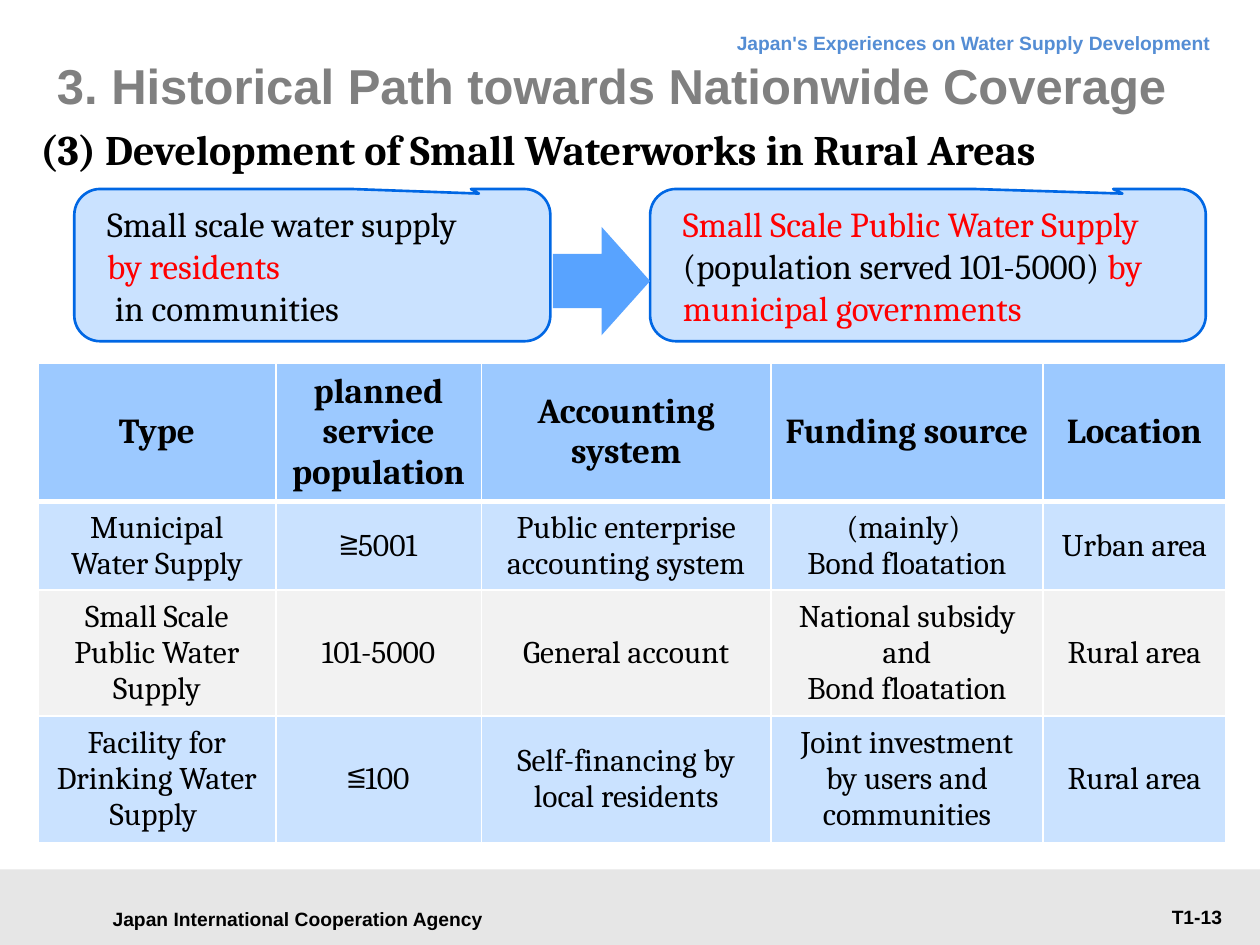
from lxml.etree import SubElement
from pptx import Presentation
from pptx.dml.color import RGBColor
from pptx.enum.shapes import MSO_SHAPE
from pptx.enum.text import MSO_ANCHOR, PP_ALIGN
from pptx.oxml.ns import qn
from pptx.util import Pt

BLACK, RED, WHITE = "000000", "FF0000", "FFFFFF"
LIGHT_BLUE, HEADER_BLUE, PALE_GREY = "CAE2FF", "9CC9FF", "F2F2F2"

SMALL = {"name": "Arial", "size": Pt(11), "bold": True}
TITLE = {"name": "Arial", "size": Pt(28), "bold": True}
SUBTITLE = {"name": "Cambria", "size": Pt(24), "bold": True}
STAGE = {"name": "Cambria", "size": Pt(20), "bold": False}
TABLE_HEAD = {"name": "Cambria", "size": Pt(20), "bold": True}
TABLE_BODY = {"name": "Cambria", "size": Pt(18), "bold": False}

COLUMN_WIDTHS = [136, 117.5, 165.5, 155.5, 104.5]
ROW_HEIGHTS = [79, 50.5, 72, 72]
SYSTEM_ROWS = [
    ["Type", "planned service population", "Accounting system",
     "Funding source", "Location"],
    ["Municipal Water Supply", "≧5001", "Public enterprise accounting system",
     "(mainly) \nBond floatation", "Urban area"],
    ["Small Scale Public Water Supply", "101-5000", "General account",
     "National subsidy and\nBond floatation", "Rural area"],
    ["Facility for Drinking Water Supply ", "≦100",
     "Self-financing by local residents",
     "Joint investment by users and communities", "Rural area"],
]


def color(hex_value):
    return RGBColor.from_string(hex_value)


def set_all(target, values):
    for key, value in values.items():
        setattr(target, key, value)


def write(frame, paragraphs, font, align=PP_ALIGN.LEFT, spacing=None):
    """Each paragraph is a list of (text, colour) runs."""
    for index, runs in enumerate(paragraphs):
        paragraph = frame.add_paragraph() if index else frame.paragraphs[0]
        set_all(paragraph, {"alignment": align, "line_spacing": spacing})
        for text, text_color in runs:
            run = paragraph.add_run()
            run.text = text
            set_all(run.font, font)
            run.font.color.rgb = color(text_color)


def set_frame(frame, anchor, margins):
    left, top, right, bottom = map(Pt, margins)
    set_all(frame, {"word_wrap": True, "vertical_anchor": anchor,
                    "margin_left": left, "margin_top": top,
                    "margin_right": right, "margin_bottom": bottom})


def add_label(slide, box, text, font, text_color=BLACK, align=PP_ALIGN.LEFT,
              anchor=MSO_ANCHOR.TOP, margins=(7.2, 3.6, 7.2, 3.6), spacing=None):
    frame = slide.shapes.add_textbox(*map(Pt, box)).text_frame
    set_frame(frame, anchor, margins)
    write(frame, [[(text, text_color)]], font, align, spacing)


def add_block(slide, preset, box, fill, line=None):
    block = slide.shapes.add_shape(preset, *map(Pt, box))
    block.shadow.inherit = False
    block.fill.solid()
    block.fill.fore_color.rgb = color(fill)
    if line:
        block.line.color.rgb = color(line)
        block.line.width = Pt(1.5)
    else:
        block.line.fill.background()
    return block


def add_stage(slide, left, width, paragraphs):
    stage = add_block(slide, MSO_SHAPE.ROUNDED_RECTANGULAR_CALLOUT,
                      (left, 108, width, 87), LIGHT_BLUE, "0067E4")
    for index, value in enumerate((0.35, -0.47, 0.17)):
        stage.adjustments[index] = value
    set_frame(stage.text_frame, MSO_ANCHOR.MIDDLE, (14.4, 2.9, 8.6, 2.9))
    write(stage.text_frame, paragraphs, STAGE)


def set_borders(cell, top, bottom):
    properties = cell._tc.get_or_add_tcPr()
    sides = (("lnL", 1), ("lnR", 1), ("lnT", top), ("lnB", bottom))
    for position, (side, width) in enumerate(sides):
        border = SubElement(properties, qn(f"a:{side}"), w=str(Pt(width)))
        properties.insert(position, border)
        fill = SubElement(border, qn("a:solidFill"))
        SubElement(fill, qn("a:srgbClr"), val=WHITE)


def add_systems_table(slide):
    table = slide.shapes.add_table(
        len(SYSTEM_ROWS), len(COLUMN_WIDTHS), Pt(21.6), Pt(207.5),
        Pt(sum(COLUMN_WIDTHS)), Pt(sum(ROW_HEIGHTS))).table
    for column, width in zip(table.columns, COLUMN_WIDTHS):
        column.width = Pt(width)
    for row, height in zip(table.rows, ROW_HEIGHTS):
        row.height = Pt(height)
    for r, texts in enumerate(SYSTEM_ROWS):
        band = LIGHT_BLUE if r % 2 else PALE_GREY
        for c, text in enumerate(texts):
            cell = table.cell(r, c)
            cell.vertical_anchor = MSO_ANCHOR.MIDDLE
            cell.fill.solid()
            cell.fill.fore_color.rgb = color(band if r else HEADER_BLUE)
            set_borders(cell, top=3 if r == 1 else 1, bottom=1 if r else 3)
            lines = [[(line, BLACK)] for line in text.split("\n")]
            write(cell.text_frame, lines, TABLE_BODY if r else TABLE_HEAD,
                  PP_ALIGN.CENTER)


def main():
    presentation = Presentation()
    presentation.slide_width, presentation.slide_height = Pt(720), Pt(540)
    slide = presentation.slides.add_slide(presentation.slide_layouts[6])

    # Footer band and running header
    add_block(slide, MSO_SHAPE.RECTANGLE, (0, 496.8, 720, 43.2), "E6E6E6")
    add_label(slide, (51, 512.6, 238.5, 24.5), "Japan International Cooperation Agency",
              SMALL, align=PP_ALIGN.CENTER, anchor=MSO_ANCHOR.MIDDLE)
    add_label(slide, (196, 9.4, 503, 27.4),
              "Japan's Experiences on Water Supply Development",
              SMALL, "548DD4", PP_ALIGN.RIGHT, spacing=Pt(18))
    add_label(slide, (592.5, 514, 113, 21), "T1-13", SMALL, align=PP_ALIGN.RIGHT)

    # Comparison of water supply types
    add_systems_table(slide)

    # Headings
    add_label(slide, (28, 20.2, 646.5, 57), "3. Historical Path towards Nationwide Coverage",
              TITLE, "808080", anchor=MSO_ANCHOR.MIDDLE, margins=(4.5, 0, 0, 0))
    add_label(slide, (20.2, 70.6, 680.5, 28.8),
              "(3) Development of Small Waterworks in Rural Areas",
              SUBTITLE, margins=(2.9, 0, 0, 0))

    # Shift from residents to municipal governments
    add_stage(slide, 42.5, 272, [[("Small scale water supply", BLACK)],
                                 [("by residents", RED)],
                                 [(" in communities", BLACK)]])
    add_stage(slide, 371.5, 317.5, [[("Small Scale Public Water Supply ", RED),
                                     ("(population served 101-5000) ", BLACK),
                                     ("by municipal governments", RED)]])
    add_block(slide, MSO_SHAPE.RIGHT_ARROW, (316, 129.6, 55.5, 62), "58A3FF")

    presentation.save("out.pptx")


if __name__ == "__main__":
    main()
